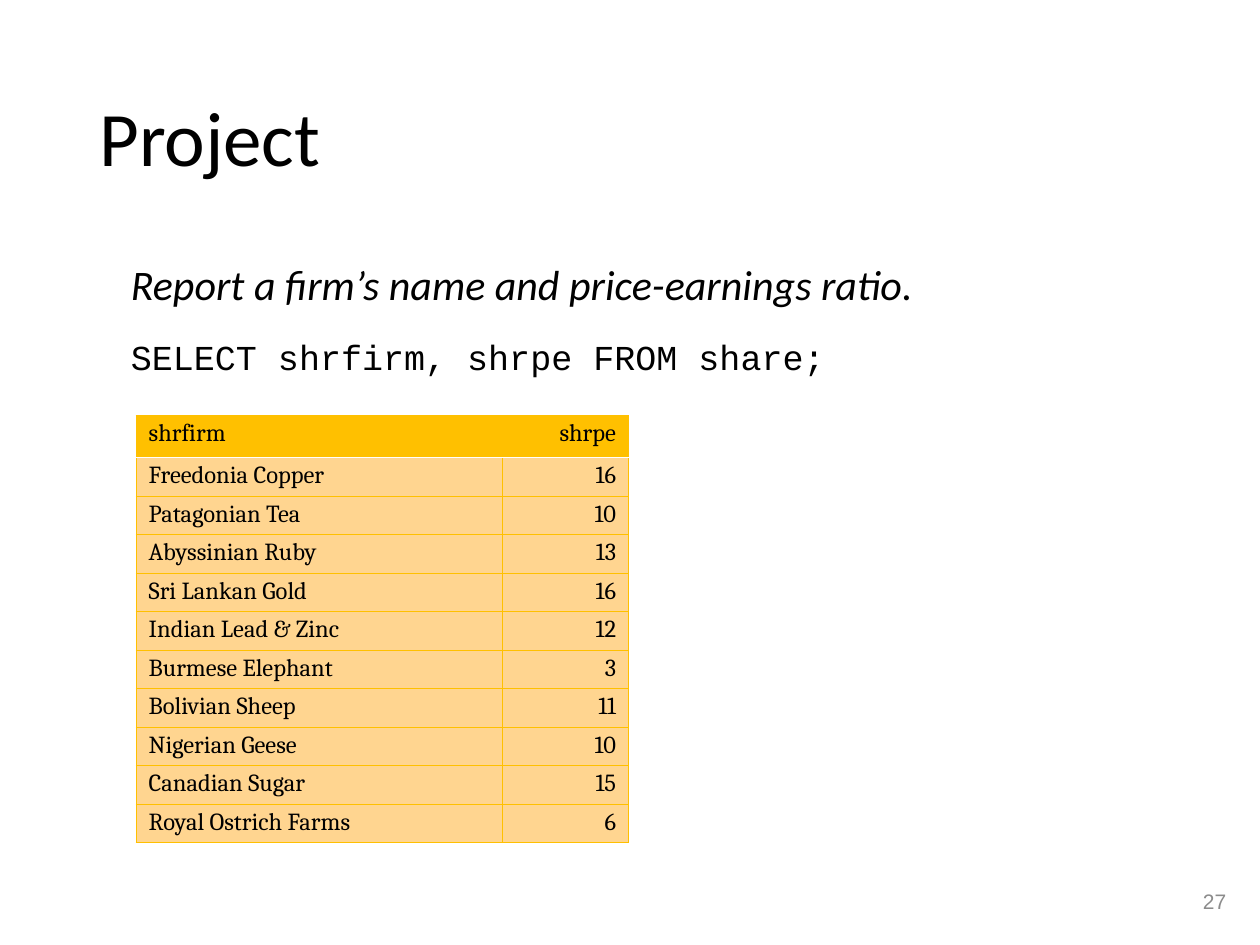
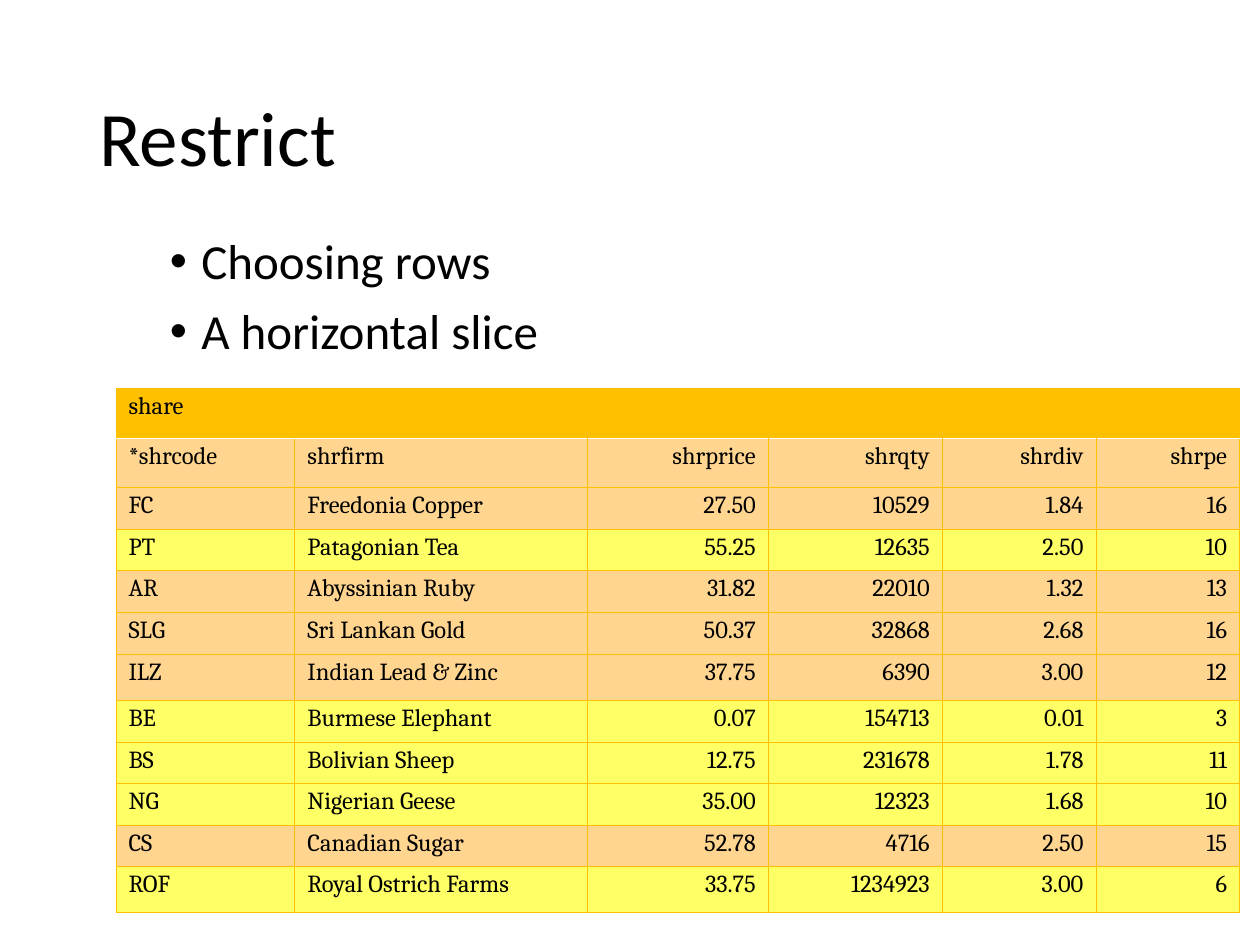
from pptx import Presentation
from pptx.dml.color import RGBColor
from pptx.enum.text import MSO_ANCHOR as Anchor, PP_ALIGN as Align
from pptx.oxml.ns import qn
from pptx.util import Inches, Pt
from lxml.etree import SubElement

# Content
FIELDS = ["*shrcode", "shrfirm", "shrprice", "shrqty", "shrdiv", "shrpe"]
SHARES = [
    ("FC", "Freedonia Copper", "27.50", "10529", "1.84", "16"),
    ("PT", "Patagonian Tea", "55.25", "12635", "2.50", "10"),
    ("AR", "Abyssinian Ruby", "31.82", "22010", "1.32", "13"),
    ("SLG", "Sri Lankan Gold", "50.37", "32868", "2.68", "16"),
    ("ILZ", "Indian Lead & Zinc", "37.75", "6390", "3.00", "12"),
    ("BE", "Burmese Elephant", "0.07", "154713", "0.01", "3"),
    ("BS", "Bolivian Sheep", "12.75", "231678", "1.78", "11"),
    ("NG", "Nigerian Geese", "35.00", "12323", "1.68", "10"),
    ("CS", "Canadian Sugar", "52.78", "4716", "2.50", "15"),
    ("ROF", "Royal Ostrich Farms", "33.75", "1234923", "3.00", "6"),
]
PROJECT_LINES = [
    [("\t", "query_tab"), ("Report a firm’s name and price-earnings ratio.", "question")],
    [("\t", "code_tab"), ("SELECT shrfirm, shrpe FROM share;", "code")],
]
RESTRICT_LINES = [[("Choosing rows", "body")], [("A horizontal slice", "body")]]
PAGE_NUMBER = "27"

# Shared look
BLACK, GREY, WHITE = "000000", "8C8C8C", "FFFFFF"
GOLD, PEACH, YELLOW = "FFC000", "FFD590", "FFFF66"
FONTS = {
    "title": dict(name="Calibri", size=Pt(44)),
    "body": dict(name="Calibri", size=Pt(28)),
    "query_tab": dict(name="Calibri", size=Pt(28), italic=True),
    "question": dict(name="Calibri", size=Pt(24), italic=True),
    "code_tab": dict(name="Courier New", size=Pt(28)),
    "code": dict(name="Courier New", size=Pt(20)),
    "number": dict(name="Arial", size=Pt(12)),
    "cell": dict(name="Cambria", size=Pt(14)),
}
TITLE_AT = (0.69, 0.4, 8.62, 1.45)
NUMBER_AT = (7.58, 6.95, 2.25, 0.4)


def color(hex_string):
    return RGBColor.from_string(hex_string)


def set_all(target, **values):
    for name, value in values.items():
        setattr(target, name, value)


def add_span(para, text, style, ink=BLACK):
    span = para.add_run()
    span.text = text
    set_all(span.font, **FONTS[style])
    span.font.color.rgb = color(ink)


def add_box(page, place, anchor=Anchor.TOP):
    box = page.shapes.add_textbox(*map(Inches, place))
    set_all(box.text_frame, word_wrap=True, vertical_anchor=anchor)
    return box.text_frame


def add_title(page, text):
    para = add_box(page, TITLE_AT, Anchor.MIDDLE).paragraphs[0]
    para.line_spacing = 0.9
    add_span(para, text, "title")


def add_number(page, text):
    para = add_box(page, NUMBER_AT, Anchor.MIDDLE).paragraphs[0]
    para.alignment = Align.RIGHT
    add_span(para, text, "number", GREY)


def add_body(page, place, lines, bullet=None):
    frame = add_box(page, place)
    for index, spans in enumerate(lines):
        para = frame.add_paragraph() if index else frame.paragraphs[0]
        set_all(para, line_spacing=0.9, space_before=Pt(10))
        props = para._p.get_or_add_pPr()
        props.set("marL", str(Inches(0.25)))
        props.set("indent", str(-Inches(0.25)))
        if bullet:
            SubElement(props, qn("a:buFont"), typeface="Arial")
            SubElement(props, qn("a:buChar"), char=bullet)
        for text, style in spans:
            add_span(para, text, style)


def add_border(cell, side, ink=GOLD, points=0.5):
    line = SubElement(cell._tc.get_or_add_tcPr(), qn(f"a:ln{side}"), w=str(Pt(points)))
    SubElement(SubElement(line, qn("a:solidFill")), qn("a:srgbClr"), val=ink)


def fill_cell(cell, text, row, fill, align, space):
    for side in "LRTB":
        under_header = (row, side) in ((0, "B"), (1, "T"))
        add_border(cell, side, *((WHITE, 1) if under_header else ()))
    cell.fill.solid()
    cell.fill.fore_color.rgb = color(fill)
    para = cell.text_frame.paragraphs[0]
    set_all(para, alignment=align, line_spacing=0.88, space_before=Pt(space))
    add_span(para, text, "cell")


def add_grid(page, left, top, widths, heights, rows, fills, head_rows, text_columns):
    frame = page.shapes.add_table(len(rows), len(widths), Inches(left), Inches(top),
                                  Inches(sum(widths)), Inches(sum(heights)))
    table = frame.table
    set_all(table, first_row=False, horz_banding=False)
    for column, width in zip(table.columns, widths):
        column.width = Inches(width)
    for r, values in enumerate(rows):
        table.rows[r].height = Inches(heights[r])
        for c, text in enumerate(values):
            align = Align.LEFT if c < text_columns else Align.RIGHT
            fill_cell(table.cell(r, c), text, r, fills[r], align, 20 if r < head_rows else 3)
    return table


def build_project(page):
    add_title(page, "Project")
    add_body(page, (0.69, 2, 8.62, 4.76), PROJECT_LINES)
    add_number(page, PAGE_NUMBER)
    # Only the firm and price-earnings columns
    rows = [(record[1], record[-1]) for record in [FIELDS, *SHARES]]
    count = len(SHARES)
    add_grid(page, 1.08, 3.3, [2.91, 1], [0.33] + [0.3] * count, rows,
             [GOLD] + [PEACH] * count, head_rows=1, text_columns=1)


def build_restrict(page):
    add_title(page, "Restrict")
    add_body(page, (1.25, 1.83, 8.5, 4.33), RESTRICT_LINES, bullet="•")
    # Rows with a price-earnings ratio below 12 stand out
    marks = [YELLOW if int(record[-1]) < 12 else PEACH for record in SHARES]
    rows = [["share"] + [""] * (len(FIELDS) - 1), FIELDS, *SHARES]
    heights = [0.36, 0.39] + [0.33] * 4 + [0.37] + [0.33] * 4 + [0.36]
    table = add_grid(page, 0.92, 3.08, [1.42, 2.32, 1.44, 1.38, 1.22, 1.14], heights, rows,
                     [GOLD, PEACH, *marks], head_rows=2, text_columns=2)
    table.cell(0, 1).merge(table.cell(0, len(FIELDS) - 1))


def main():
    deck = Presentation()
    set_all(deck, slide_width=Inches(10), slide_height=Inches(7.5))
    for build in (build_project, build_restrict):
        build(deck.slides.add_slide(deck.slide_layouts[6]))
    deck.save("out.pptx")


if __name__ == "__main__":
    main()
